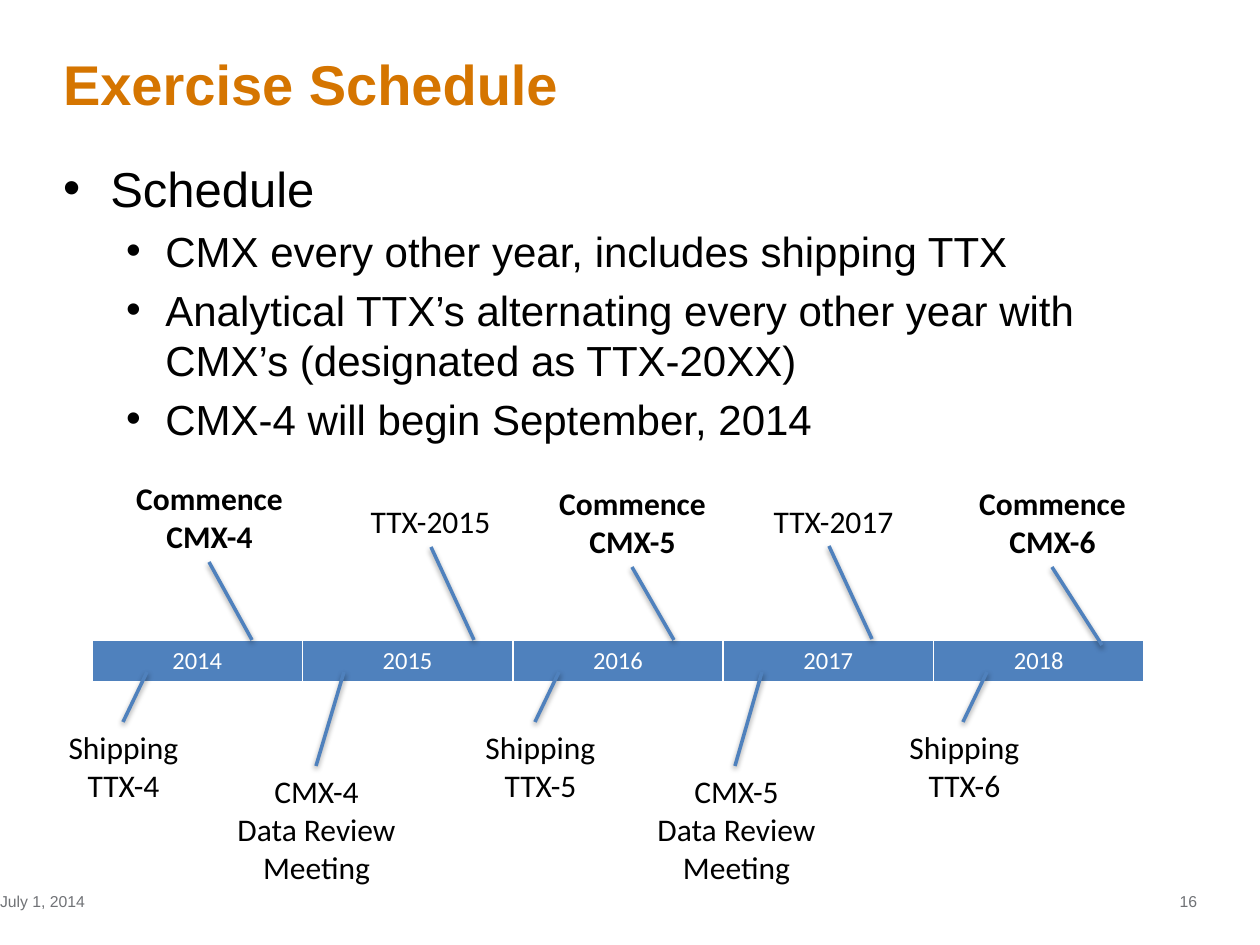
from pptx import Presentation
from pptx.dml.color import RGBColor
from pptx.enum.shapes import MSO_CONNECTOR as Conn
from pptx.enum.text import MSO_ANCHOR as Anchor, MSO_AUTO_SIZE as Fit, PP_ALIGN as Align
from pptx.oxml.ns import qn
from pptx.util import Pt
from lxml.etree import SubElement

SCALE = 914400 / 126
COLORS = {"title": "D57500", "text": "000000", "foot": "707276",
          "bar": "4F81BD", "year": "FFFFFF"}


def px(*vals):
    return [round(v * SCALE) for v in vals]


def style(frame, size, color, align, font="Arial", bold=False):
    for para in frame.paragraphs:
        para.alignment = align
        for run in para.runs:
            run.font.name = font
            run.font.size = Pt(size)
            run.font.bold = bold
            run.font.color.rgb = RGBColor.from_string(COLORS[color])


deck = Presentation()
deck.slide_width, deck.slide_height = px(1260, 945)
slide = deck.slides.add_slide(deck.slide_layouts[1])
shapes = slide.shapes

# Title and body
title, body = shapes.title, slide.placeholders[1]
title.left, title.top, title.width, title.height = px(63, 49, 914, 68)
body.left, body.top, body.width, body.height = px(63, 158, 1134, 599)
title.text_frame.text = "Exercise Schedule"
body.text_frame.text = "\n".join([
    "Schedule",
    "CMX every other year, includes shipping TTX",
    "Analytical TTX’s alternating every other year with CMX’s (designated as TTX-20XX)",
    "CMX-4 will begin September, 2014"])
for item in body.text_frame.paragraphs[1:]:
    item.level = 1
    SubElement(item._p.get_or_add_pPr(), qn("a:buChar"), char="•")
style(title.text_frame, 32, "title", Align.LEFT, bold=True)
style(body.text_frame, 24, "text", Align.LEFT)
body.text_frame.paragraphs[0].runs[0].font.size = Pt(28)

# Page number and date
feet = [("16", 903, Align.RIGHT), ("July 1, 2014", 0, Align.LEFT)]
for text, x, align in feet:
    foot = shapes.add_textbox(*px(x, 876, 294, 50)).text_frame
    foot.text = text
    foot.word_wrap = True
    foot.vertical_anchor = Anchor.MIDDLE
    foot.margin_left = foot.margin_right = foot.margin_top = foot.margin_bottom = 0
    style(foot, 9, "foot", align)
for frame in (title.text_frame, body.text_frame):
    frame.margin_left = frame.margin_right = frame.margin_top = frame.margin_bottom = 0
    frame.vertical_anchor = Anchor.TOP
    frame.auto_size = Fit.NONE

# Year bar
table = shapes.add_table(1, 5, *px(92, 640, 1052, 42)).table
for i, cell in enumerate(table.iter_cells()):
    cell.text_frame.text = str(2014 + i)
    cell.fill.solid()
    cell.fill.fore_color.rgb = RGBColor.from_string(COLORS["bar"])
    style(cell.text_frame, 14, "year", Align.CENTER, "Calibri")

# Events: label, box, line from and to
events = [
    ("Commence\nCMX-4", (123, 473, 173, 89), (209, 562, 252, 640)),
    ("Commence\nCMX-5", (546, 478, 173, 89), (632, 567, 674, 640)),
    ("Commence\nCMX-6", (966, 478, 173, 89), (1052, 567, 1102, 645)),
    ("TTX-2015", (357, 496, 147, 50), (431, 547, 474, 640)),
    ("TTX-2017", (760, 496, 147, 50), (829, 546, 872, 639)),
    ("Shipping\nTTX-4", (55, 722, 137, 89), (147, 672, 123, 722)),
    ("Shipping\nTTX-5", (472, 722, 137, 89), (559, 672, 535, 722)),
    ("Shipping\nTTX-6", (896, 722, 137, 89), (987, 672, 963, 722)),
    ("CMX-4\nData Review\nMeeting", (224, 766, 185, 127), (344, 672, 316, 766)),
    ("CMX-5\nData Review\nMeeting", (644, 766, 185, 127), (762, 672, 735, 766)),
]
for text, box, ends in events:
    label = shapes.add_textbox(*px(*box)).text_frame
    label.text = text
    label.word_wrap = False
    label.auto_size = Fit.SHAPE_TO_FIT_TEXT
    style(label, 18, "text", Align.CENTER, "Calibri", text.startswith("Commence"))
    # The theme gives the line its soft shadow
    line = shapes.add_connector(Conn.STRAIGHT, *px(*ends)).line
    line.width = Pt(2)
    line.color.rgb = RGBColor.from_string(COLORS["bar"])

deck.save("out.pptx")
